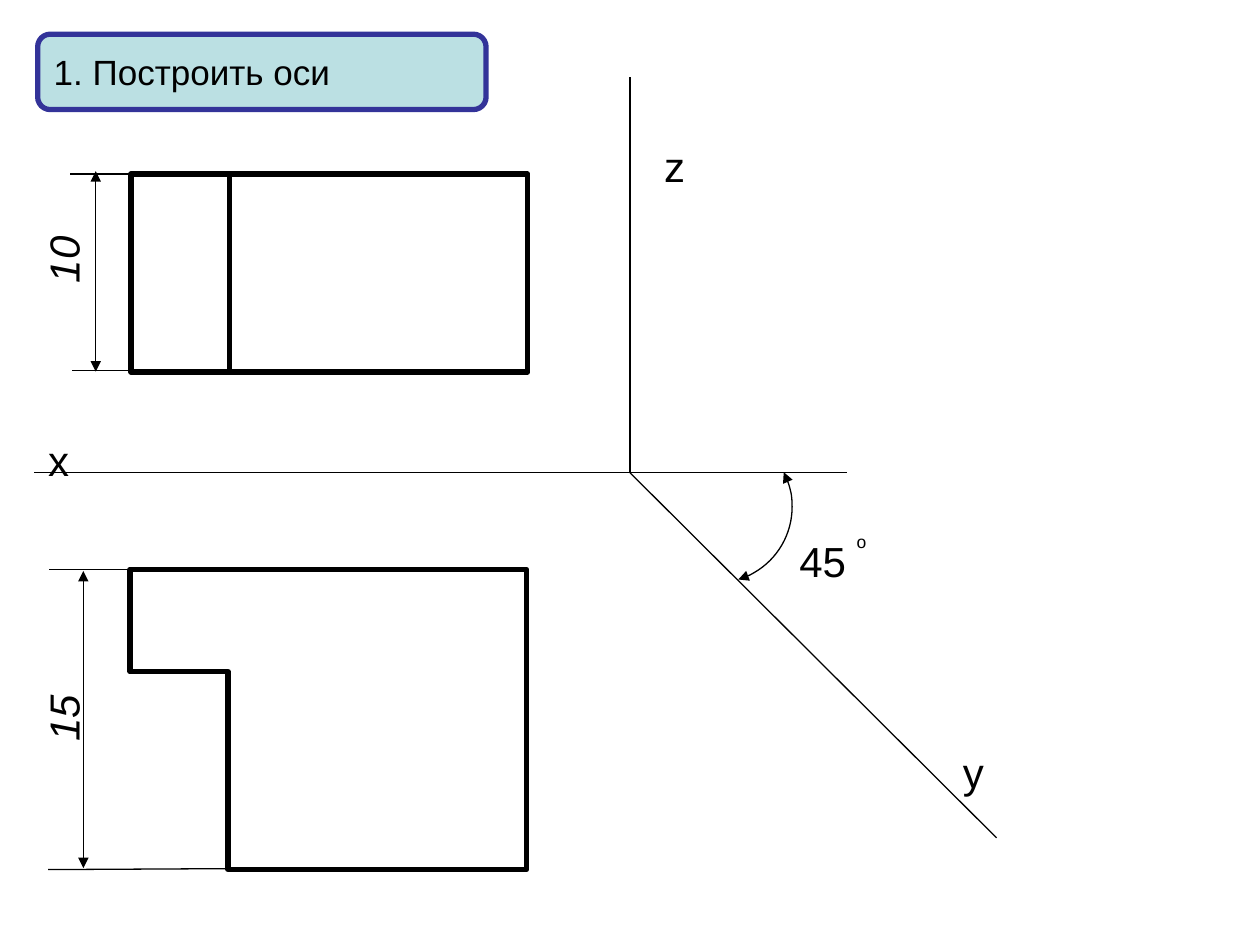
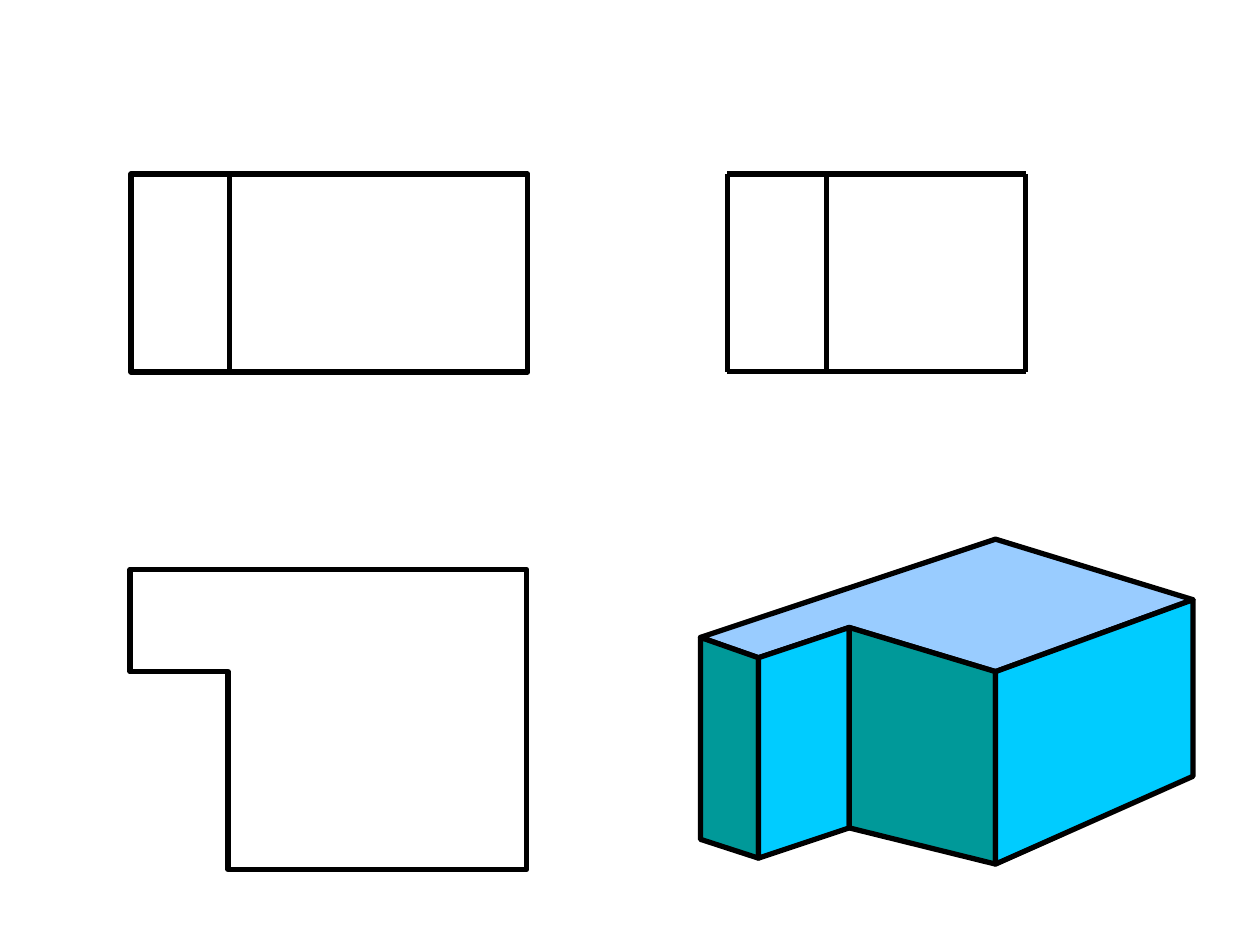
from pptx import Presentation
from pptx.dml.color import RGBColor
from pptx.enum.shapes import MSO_CONNECTOR, MSO_SHAPE
from pptx.enum.text import MSO_ANCHOR, PP_ALIGN
from pptx.oxml.ns import qn
from pptx.util import Cm, Pt
from lxml.etree import SubElement

BLACK, NAVY, PALE_TEAL = "000000", "333399", "BBE0E3"
TOP_FACE, FRONT_FACE, SIDE_FACE = "99CCFF", "00CCFF", "009999"
THIN, THICK = 0.75, 3


def color(value):
    return RGBColor.from_string(value)


class Drawing:
    """Drawing style and the slide being drawn; lengths are in centimetres."""

    font = "Arial"

    def __init__(self):
        self.deck = Presentation()
        self.deck.slide_width, self.deck.slide_height = Cm(25.4), Cm(19.05)
        self.slide = None

    def new_slide(self):
        self.slide = self.deck.slides.add_slide(self.deck.slide_layouts[6])

    def finish(self, shape, fill, line, width):
        shape.shadow.inherit = False
        if fill:
            shape.fill.solid()
            shape.fill.fore_color.rgb = color(fill)
        else:
            shape.fill.background()
        shape.line.color.rgb = color(line)
        shape.line.width = Pt(width)
        return shape

    def preset(self, kind, left, top, width, height, fill=None, line=BLACK, weight=THICK):
        shape = self.slide.shapes.add_shape(kind, Cm(left), Cm(top), Cm(width), Cm(height))
        return self.finish(shape, fill, line, weight)

    def outline(self, points, fill=None):
        start, *rest = [(Cm(x), Cm(y)) for x, y in points]
        builder = self.slide.shapes.build_freeform(*start)
        builder.add_line_segments(rest, close=True)
        return self.finish(builder.convert_to_shape(), fill, BLACK, THICK)

    def arrows(self, shape):
        line = shape._element.spPr.find(qn("a:ln"))
        for end in ("a:headEnd", "a:tailEnd"):
            SubElement(line, qn(end), type="triangle")

    def line(self, x1, y1, x2, y2, weight=THIN, arrows=False):
        line = self.slide.shapes.add_connector(
            MSO_CONNECTOR.STRAIGHT, Cm(x1), Cm(y1), Cm(x2), Cm(y2))
        line.line.color.rgb = color(BLACK)
        line.line.width = Pt(weight)
        if arrows:
            self.arrows(line)
        SubElement(line._element.spPr, qn("a:effectLst"))

    def arc(self, x, y, radius, start, end):
        arc = self.preset(MSO_SHAPE.ARC, x - radius, y - radius,
                          2 * radius, 2 * radius, weight=THIN)
        for index, angle in enumerate((start, end)):
            arc.adjustments[index] = angle * 0.6  # 60000ths of a degree
        self.arrows(arc)

    def add_words(self, paragraph, text, size, italic=False):
        run = paragraph.add_run()
        run.text = text
        style = {"name": self.font, "size": Pt(size), "italic": italic}
        for key, value in style.items():
            setattr(run.font, key, value)
        run.font.color.rgb = color(BLACK)

    def label(self, text, left, top, width, height=0.97, size=24, italic=False, rotation=0):
        box = self.slide.shapes.add_textbox(Cm(left), Cm(top), Cm(width), Cm(height))
        box.rotation = rotation
        frame = box.text_frame
        layout = {"margin_left": 0, "margin_right": 0, "margin_top": 0,
                  "margin_bottom": 0, "word_wrap": False}
        for key, value in layout.items():
            setattr(frame, key, value)
        frame.paragraphs[0].alignment = PP_ALIGN.CENTER
        self.add_words(frame.paragraphs[0], text, size, italic)

    def step(self, text):
        banner = self.preset(MSO_SHAPE.ROUNDED_RECTANGLE, 0.76, 0.69, 9.04, 1.52,
                             PALE_TEAL, NAVY)
        frame = banner.text_frame
        frame.vertical_anchor = MSO_ANCHOR.MIDDLE
        frame.paragraphs[0].alignment = PP_ALIGN.LEFT
        self.add_words(frame.paragraphs[0], text, 20)

    def two_views(self):
        """Front view above, plan view below."""
        self.preset(MSO_SHAPE.RECTANGLE, 2.64, 3.51, 8, 3.99)
        self.line(4.62, 3.53, 4.62, 7.49, THICK)
        self.outline([(2.62, 11.48), (10.62, 11.48), (10.62, 17.53),
                      (4.6, 17.53), (4.6, 13.54), (2.62, 13.54)])


def axes_slide(drawing):
    drawing.new_slide()
    drawing.two_views()

    # Axes
    origin = (12.7, 9.53)
    for end in ((0.69, 9.53), (12.7, 1.55), (20.09, 16.89), (17.07, 9.53)):
        drawing.line(*origin, *end)
    for axis, left, top in (("x", 0.97, 8.76), ("y", 19.41, 15.04), ("z", 13.39, 2.84)):
        drawing.label(axis, left, top, 0.38)

    drawing.step("1. Построить оси")

    # Angle between the axes
    drawing.arc(14.44, 10.22, 1.53, 332.8, 73.1)
    drawing.label("45", 16.1, 10.8, 0.97)
    drawing.label("о", 17.27, 10.71, 0.18, 0.43, size=10)

    # Dimensions: value, its top, dimension line, extension lines
    dimensions = (
        ("10", 4.75, (1.93, 3.45, 1.93, 7.49),
         ((3.58, 7.47, 1.45, 7.47), (3.53, 3.51, 1.42, 3.51))),
        ("15", 14, (1.68, 11.51, 1.68, 17.5),
         ((6.63, 17.5, 0.97, 17.53), (4.62, 11.48, 0.99, 11.48))),
    )
    for value, top, measure, extensions in dimensions:
        for extension in extensions:
            drawing.line(*extension)
        drawing.line(*measure, arrows=True)
        drawing.label(value, 0.76, top, 0.97, italic=True, rotation=270)


def solid_slide(drawing):
    drawing.new_slide()
    drawing.two_views()

    # Side view
    left, step, right, top, bottom = 14.66, 16.66, 20.68, 3.51, 7.49
    for x in (left, right, step):
        drawing.line(x, top, x, bottom, THICK)
    for y in (top, bottom):
        drawing.line(left, y, right, y, THICK)

    # Solid: visible vertical edges from left to right, as (x, top, bottom)
    edges = ((14.12, 12.85, 16.92), (15.29, 13.26, 17.3), (17.12, 12.65, 16.69),
             (20.07, 13.54, 17.42), (24.05, 12.09, 15.65))
    back_corner = (20.07, 10.87)
    drawing.outline([(x, high) for x, high, low in edges] + [back_corner], TOP_FACE)
    fills = (SIDE_FACE, FRONT_FACE) * 2
    for (x1, high1, low1), (x2, high2, low2), fill in zip(edges, edges[1:], fills):
        drawing.outline([(x1, high1), (x2, high2), (x2, low2), (x1, low1)], fill)


def main():
    drawing = Drawing()
    axes_slide(drawing)
    solid_slide(drawing)
    drawing.deck.save("out.pptx")


if __name__ == "__main__":
    main()
